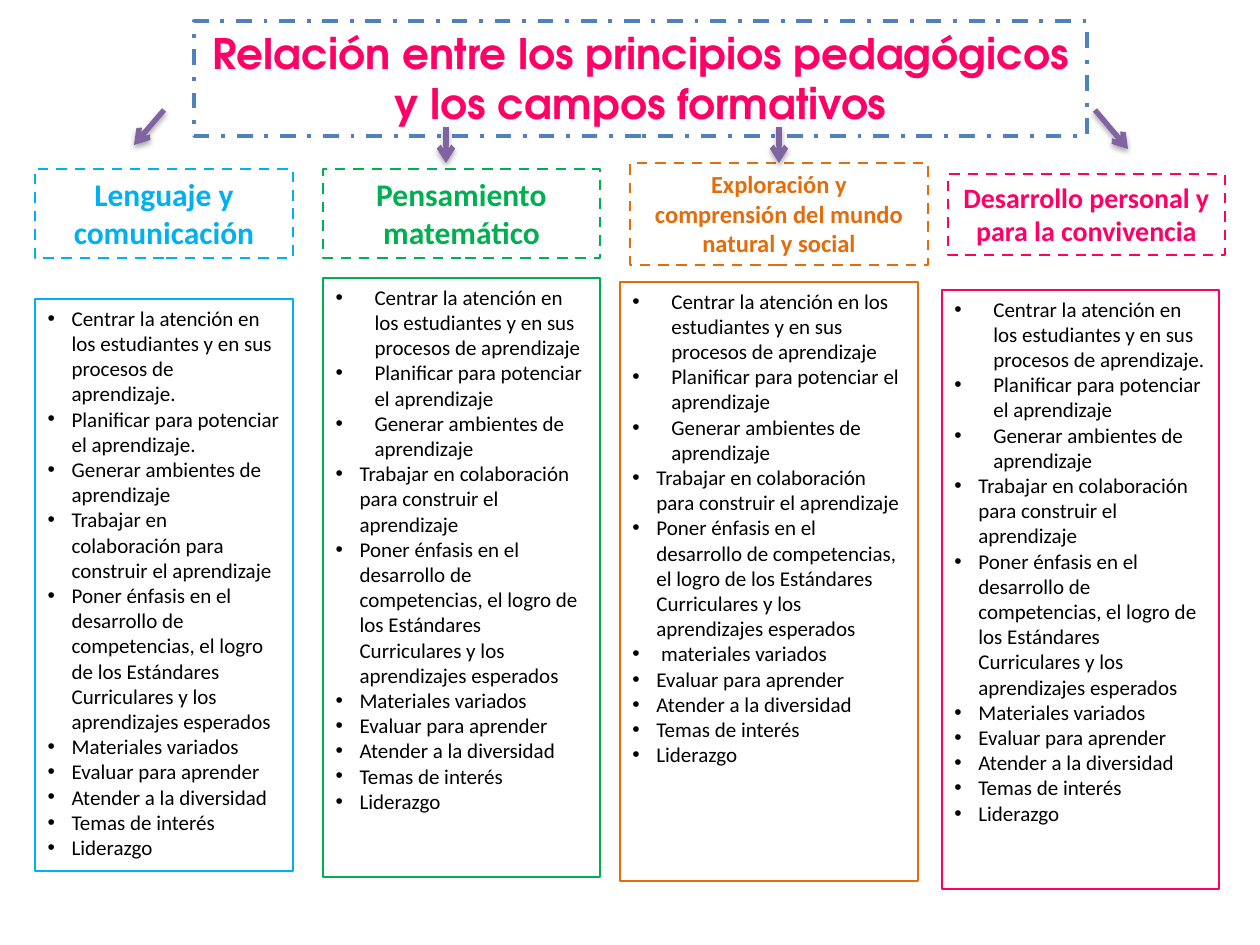
"""Build the slide relating the pedagogical principles to the four formative fields."""
from lxml import etree
from pptx import Presentation
from pptx import util as u
from pptx.dml.color import RGBColor
from pptx.enum import dml, shapes, text
from pptx.oxml import parse_xml
from pptx.oxml.ns import nsdecls, qn

PX = 914400 / 126
BLUE = RGBColor(0x4F, 0x81, 0xBD)
CYAN = RGBColor(0x00, 0xB0, 0xF0)
GREEN = RGBColor(0x00, 0xB0, 0x50)
ORANGE = RGBColor(0xE4, 0x6C, 0x0A)
PINK = RGBColor(0xFF, 0x00, 0x66)
PURPLE = RGBColor(0x80, 0x64, 0xA2)
BLACK = RGBColor(0, 0, 0)

TITLE = "Relación entre los principios pedagógicos y los campos formativos"
TITLE_BOX = (194, 21, 893, 115)
PRINCIPLES = [
    "Centrar la atención en los estudiantes y en sus procesos de aprendizaje",
    "Planificar para potenciar el aprendizaje",
    "Generar ambientes de aprendizaje",
    "Trabajar en colaboración para construir el aprendizaje",
    "Poner énfasis en el desarrollo de competencias, el logro de los Estándares "
    "Curriculares y los aprendizajes esperados",
    "Materiales variados",
    "Evaluar para aprender",
    "Atender a la diversidad",
    "Temas de interés",
    "Liderazgo",
]
NARROW, WIDE = 24, 39
FIELDS = [
    dict(name="Lenguaje y comunicación", size=18, color=CYAN, indent=NARROW,
         head=(35, 169, 258, 89), body=(35, 299, 258, 572),
         changes={0: PRINCIPLES[0] + ".", 1: PRINCIPLES[1] + "."}),
    dict(name="Pensamiento matemático", size=18, color=GREEN, indent=WIDE,
         head=(323, 169, 277, 89), body=(323, 278, 277, 599), changes={}),
    dict(name="Exploración y comprensión del mundo natural y social", size=14,
         color=ORANGE, indent=WIDE, head=(630, 163, 298, 102),
         body=(620, 282, 298, 599), changes={5: " materiales variados"}),
    dict(name="Desarrollo personal y para la convivencia", size=16, color=PINK,
         indent=WIDE, head=(948, 174, 277, 81), body=(942, 290, 277, 599),
         changes={0: PRINCIPLES[0] + "."}),
]
ARROWS = [
    (164, 110, 134, 145),
    (446, 127, 446, 163),
    (779, 127, 779, 163),
    (1095, 110, 1128, 149),
]
SHADOW = (
    f'<a:effectLst {nsdecls("a")}><a:outerShdw blurRad="40000" dist="23000" '
    'dir="5400000" rotWithShape="0"><a:srgbClr val="000000"><a:alpha val="35000"/>'
    '</a:srgbClr></a:outerShdw></a:effectLst>'
)


def px(n):
    return u.Emu(round(n * PX))


def fill_box(sp, box, lines, font, size, color, bold, align, line, width, dash=None):
    sp.left, sp.top, sp.width, sp.height = map(px, box)
    sp.line.color.rgb = line
    sp.line.width = u.Pt(width)
    if dash:
        sp.line.dash_style = dash
    tf = sp.text_frame
    tf.text = "\n".join(lines)
    tf.word_wrap = True
    tf.auto_size = text.MSO_AUTO_SIZE.NONE
    tf.vertical_anchor = text.MSO_ANCHOR.TOP
    for p in tf.paragraphs:
        p.alignment = align
        p.space_before = u.Pt(0)
        for r in p.runs:
            r.font.name, r.font.size, r.font.bold = font, u.Pt(size), bold
            r.font.color.rgb = color


def add_bullet(p, indent):
    pPr = p._p.get_or_add_pPr()
    pPr.set("marL", str(px(indent)))
    pPr.set("indent", str(-px(indent)))
    etree.SubElement(pPr, qn("a:buFont")).set("typeface", "Arial")
    etree.SubElement(pPr, qn("a:buChar")).set("char", "•")


def main():
    prs = Presentation()
    prs.slide_width, prs.slide_height = u.Inches(10), u.Inches(7.5)
    s = prs.slides.add_slide(prs.slide_layouts[4])
    for sp in list(s.placeholders):
        if sp.placeholder_format.idx >= 10:
            sp._element.getparent().remove(sp._element)
    title, *slots = s.placeholders

    def next_box():
        return slots.pop(0) if slots else s.shapes.add_textbox(0, 0, 0, 0)

    center, left = text.PP_ALIGN.CENTER, text.PP_ALIGN.LEFT
    fill_box(title, TITLE_BOX, [TITLE], "TeX Gyre Adventor", 24, PINK, True, center,
             BLUE, 2.25, dml.MSO_LINE.DASH_DOT)

    heads = []
    for field in FIELDS:
        color = field["color"]
        head, body = next_box(), next_box()
        fill_box(head, field["head"], [field["name"]], "Calibri", field["size"], color,
                 True, center, color, 1.5, dml.MSO_LINE.DASH)
        lines = [field["changes"].get(i, line) for i, line in enumerate(PRINCIPLES)]
        fill_box(body, field["body"], lines, "Calibri", 12, BLACK, False, left,
                 color, 1.5)
        for i, p in enumerate(body.text_frame.paragraphs):
            add_bullet(p, field["indent"] if i < 3 else NARROW)
        heads.append(head)

    arrows = []
    for ends in ARROWS:
        c = s.shapes.add_connector(shapes.MSO_CONNECTOR.STRAIGHT, *map(px, ends))
        c.line.color.rgb = PURPLE
        c.line.width = u.Pt(3)
        spPr = c._element.spPr
        etree.SubElement(spPr.find(qn("a:ln")), qn("a:tailEnd")).set("type", "arrow")
        spPr.append(parse_xml(SHADOW))
        arrows.append(c)
    arrows[2].end_connect(heads[2], 0)

    prs.save("out.pptx")


if __name__ == "__main__":
    main()
